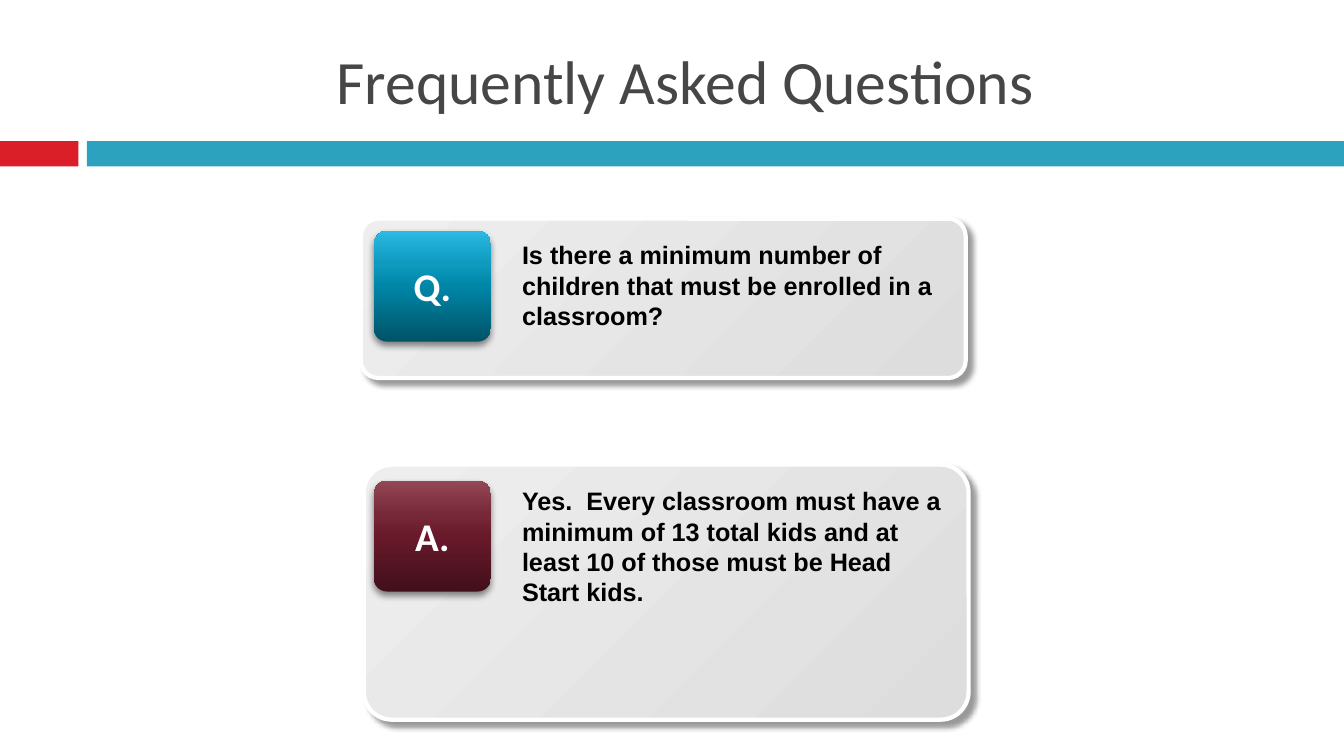
from collections import namedtuple

from lxml import etree
from pptx import Presentation
from pptx.dml.color import RGBColor
from pptx.enum.shapes import MSO_SHAPE
from pptx.enum.text import MSO_ANCHOR, MSO_AUTO_SIZE, PP_ALIGN
from pptx.oxml.ns import qn
from pptx.util import Pt

RECTANGLE = MSO_SHAPE.RECTANGLE
ROUNDED = MSO_SHAPE.ROUNDED_RECTANGLE
MIDDLE, TOP = MSO_ANCHOR.MIDDLE, MSO_ANCHOR.TOP
CENTER, LEFT = PP_ALIGN.CENTER, PP_ALIGN.LEFT
GROW = MSO_AUTO_SIZE.SHAPE_TO_FIT_TEXT

WHITE = RGBColor(0xFF, 0xFF, 0xFF)
BLACK = RGBColor(0x00, 0x00, 0x00)
TITLE_GRAY = RGBColor(0x46, 0x46, 0x46)
RED = RGBColor(0xDA, 0x1F, 0x28)
TEAL = RGBColor(0x2D, 0xA2, 0xBF)
CARD_STOPS = [(0, RGBColor(0xEE, 0xEE, 0xEE)), (100, RGBColor(0xDD, 0xDD, 0xDD))]
QUESTION_STOPS = [(0, RGBColor(0x00, 0x53, 0x67)), (50, RGBColor(0x00, 0x86, 0xA7)),
                  (70, RGBColor(0x0E, 0x9A, 0xBE)), (100, RGBColor(0x2C, 0xB9, 0xE3))]
ANSWER_STOPS = [(0, RGBColor(0x42, 0x0F, 0x1A)), (50, RGBColor(0x68, 0x1A, 0x2B)),
                (70, RGBColor(0x77, 0x29, 0x39)), (100, RGBColor(0x94, 0x47, 0x55))]

TITLE_FONT = {"name": "Calibri", "size": Pt(44), "bold": False}
BADGE_FONT = {"name": "Calibri", "size": Pt(28), "bold": True}
BODY_FONT = {"name": "Arial", "size": Pt(18), "bold": True}
CARD_SHADOW = {"alpha": 40, "blur": 4, "distance": 5, "angle": 45}
BADGE_SHADOW = {"alpha": 45, "blur": 5, "distance": 3, "angle": 90}

BADGE_WIDTH, BADGE_HEIGHT = 83.5, 79.2
TEXT_SHIFT, TEXT_TOP, TEXT_WIDTH = 98.7, 11.5, 316.8

Box = namedtuple("Box", "left top width height")
Entry = namedtuple("Entry", "letter text stops badge_left badge_top text_height")


def add_box(slide, kind, box):
    shape = slide.shapes.add_shape(kind, *map(Pt, box))
    shape.shadow.inherit = False
    shape.line.fill.background()
    return shape


def write(shape, text, font_format, color, alignment, anchor, wrap=True):
    frame = shape.text_frame
    frame.word_wrap = wrap
    frame.vertical_anchor = anchor
    paragraph = frame.paragraphs[0]
    paragraph.alignment = alignment
    run = paragraph.add_run()
    run.text = text
    for name, value in font_format.items():
        setattr(run.font, name, value)
    run.font.color.rgb = color


def add_color(parent, color):
    return etree.SubElement(parent, qn("a:srgbClr"), val=str(color))


def fill_gradient(shape, stops, angle):
    shape.fill.gradient()
    gradient = shape.element.spPr.find(qn("a:gradFill"))
    for child in list(gradient):
        gradient.remove(child)
    stop_list = etree.SubElement(gradient, qn("a:gsLst"))
    for position, color in stops:
        stop = etree.SubElement(stop_list, qn("a:gs"), pos=str(position * 1000))
        add_color(stop, color)
    etree.SubElement(gradient, qn("a:lin"), ang=str(angle * 60000), scaled="0")


def cast_shadow(shape, alpha, blur, distance, angle):
    effects = shape.element.spPr.find(qn("a:effectLst"))
    shadow = etree.SubElement(effects, qn("a:outerShdw"), blurRad=str(Pt(blur)),
                              dist=str(Pt(distance)), dir=str(angle * 60000),
                              algn="ctr", rotWithShape="0")
    etree.SubElement(add_color(shadow, BLACK), qn("a:alpha"), val=str(alpha * 1000))


def add_header(slide, box):
    bar_height, red_width, bar_start = 18, 56, 62
    bar_top = box.top + box.height - bar_height
    for left, width, color in ((0, red_width, RED),
                               (bar_start, box.width - bar_start, TEAL)):
        bar = add_box(slide, RECTANGLE, Box(box.left + left, bar_top, width, bar_height))
        bar.fill.solid()
        bar.fill.fore_color.rgb = color
    title_box = Box(box.left + 168.5, box.top + 18, 642.2, 77.8)
    title = slide.shapes.add_textbox(*map(Pt, title_box))
    write(title, "Frequently Asked Questions", TITLE_FONT, TITLE_GRAY, CENTER, MIDDLE)


def add_card(slide, box, entry):
    card = add_box(slide, ROUNDED, box)
    card.adjustments[0] = 0.11
    fill_gradient(card, CARD_STOPS, 45)
    card.line.color.rgb = WHITE
    card.line.width = Pt(3)
    cast_shadow(card, **CARD_SHADOW)

    badge_left = box.left + entry.badge_left
    badge = add_box(slide, ROUNDED, Box(badge_left, box.top + entry.badge_top,
                                        BADGE_WIDTH, BADGE_HEIGHT))
    badge.adjustments[0] = 0.12
    fill_gradient(badge, entry.stops, 270)
    cast_shadow(badge, **BADGE_SHADOW)
    write(badge, entry.letter, BADGE_FONT, WHITE, CENTER, MIDDLE, wrap=False)

    text_box = Box(badge_left + TEXT_SHIFT, box.top + TEXT_TOP,
                   TEXT_WIDTH, entry.text_height)
    body = slide.shapes.add_textbox(*map(Pt, text_box))
    write(body, entry.text, BODY_FONT, BLACK, LEFT, TOP)
    body.text_frame.auto_size = GROW


def main():
    presentation = Presentation()
    presentation.slide_width, presentation.slide_height = Pt(960), Pt(540)
    slide = presentation.slides.add_slide(presentation.slide_layouts[6])
    add_header(slide, Box(0, 0, 960, 118.8))
    question = Entry("Q.", "Is there a minimum number of children that must be "
                     "enrolled in a classroom?", QUESTION_STOPS, 9.3, 8.7, 72.7)
    answer = Entry("A.", "Yes.  Every classroom must have a minimum of 13 total kids "
                   "and at least 10 of those must be Head Start kids.",
                   ANSWER_STOPS, 7.2, 11.5, 94.3)
    add_card(slide, Box(257.8, 156.2, 432, 113.8), question)
    add_card(slide, Box(259.9, 331.9, 432, 182.2), answer)
    presentation.save("out.pptx")


if __name__ == "__main__":
    main()
